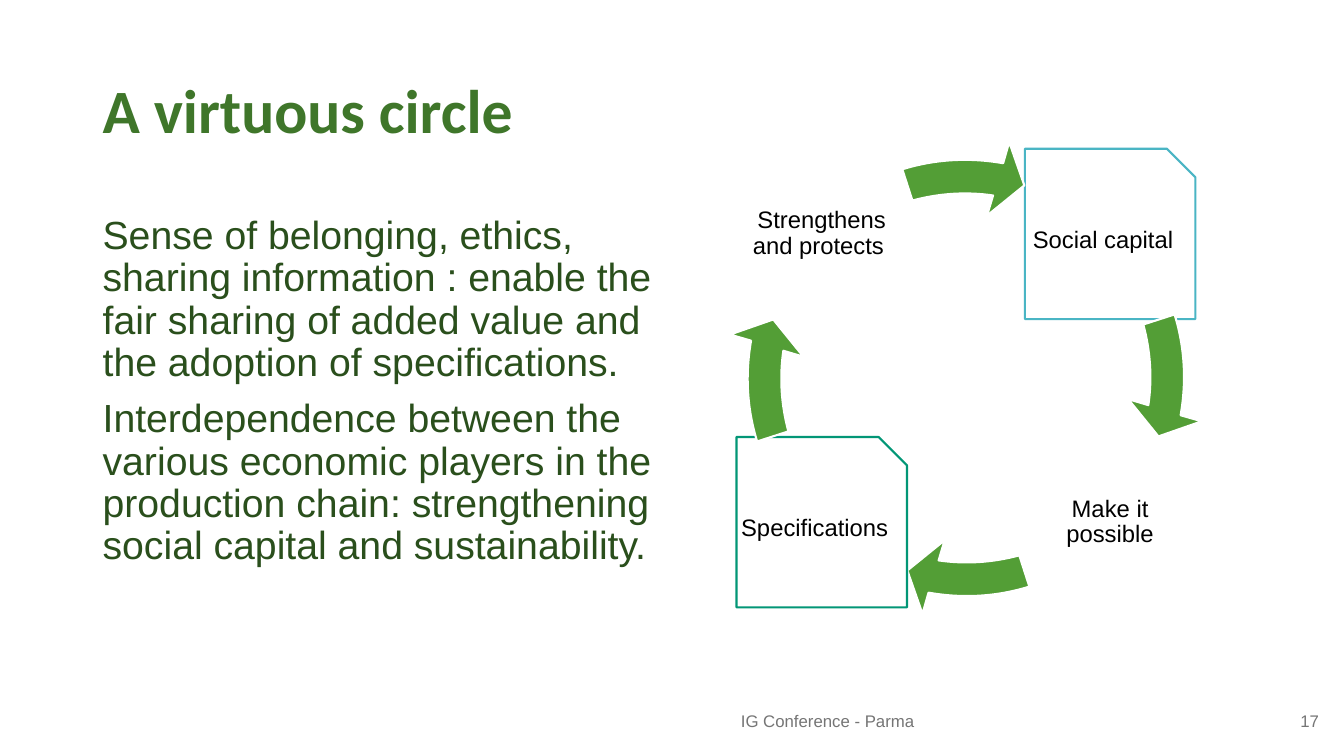
import lxml.etree
import pptx
import pptx.dml.color
import pptx.enum.shapes
import pptx.enum.text
import pptx.oxml.ns
import pptx.util

Inches = pptx.util.Inches
RGBColor = pptx.dml.color.RGBColor
ALIGN = pptx.enum.text.PP_ALIGN
ANCHOR = pptx.enum.text.MSO_ANCHOR
qn = pptx.oxml.ns.qn

WHITE = RGBColor(0xFF, 0xFF, 0xFF)
BLACK = RGBColor(0x00, 0x00, 0x00)
TITLE_GREEN = RGBColor(0x3F, 0x76, 0x2A)
BODY_GREEN = RGBColor(0x2A, 0x4F, 0x1C)
ARROW_GREEN = RGBColor(0x53, 0x9E, 0x36)
AQUA = RGBColor(0x4A, 0xB5, 0xC4)
TEAL = RGBColor(0x02, 0x96, 0x76)
GREY = RGBColor(0x75, 0x75, 0x75)

BODY = [
    "Sense of belonging, ethics, sharing information : enable the fair sharing "
    "of added value and the adoption of specifications.",
    "Interdependence between the various economic players in the production "
    "chain: strengthening social capital and sustainability.",
]
# Clockwise from the top right; an outline colour marks a card
STAGES = [
    ("Social capital", AQUA),
    ("Make it possible", None),
    ("Specifications ", TEAL),
    ("Strengthens and protects ", None),
]
# The right-hand arrow, measured from the centre of the circle
OUTER_CURVE = [(2.17, -0.31), (2.19, 0.03), (2.13, 0.37)]
HEAD = [(2.34, 0.43), (1.91, 0.58), (1.61, 0.21), (1.81, 0.27)]
INNER_CURVE = [(1.85, 0), (1.83, -0.27), (1.76, -0.53)]
ARROW = [(2.07, -0.63)] + OUTER_CURVE + HEAD + INNER_CURVE


def add_text(slide, box, paragraphs, size, color, font="Arial", bold=False,
             align=ALIGN.LEFT, anchor=ANCHOR.MIDDLE, spacing=0.9, insets=(0.1, 0.05)):
    frame = slide.shapes.add_textbox(*map(Inches, box)).text_frame
    frame.word_wrap = True
    frame.vertical_anchor = anchor
    frame.margin_left = frame.margin_right = Inches(insets[0])
    frame.margin_top = frame.margin_bottom = Inches(insets[1])
    for index, text in enumerate(paragraphs):
        paragraph = frame.add_paragraph() if index else frame.paragraphs[0]
        paragraph.text = text
        paragraph.alignment = align
        paragraph.line_spacing = spacing
        if index:
            paragraph.space_before = pptx.util.Pt(10)
        paragraph.font.name = font
        paragraph.font.size = pptx.util.Pt(size)
        paragraph.font.bold = bold
        paragraph.font.color.rgb = color


def paint(shape, fill, line):
    shape.shadow.inherit = False
    shape.fill.solid()
    shape.fill.fore_color.rgb = fill
    shape.line.color.rgb = line
    shape.line.width = pptx.util.Pt(1.5)


def add_stage(slide, box, label, outline):
    left, top, width, height = box
    if outline is not None:
        card = slide.shapes.add_shape(
            pptx.enum.shapes.MSO_SHAPE.SNIP_1_RECTANGLE, *map(Inches, box))
        paint(card, WHITE, outline)
        snip = 0.14
        box = (left, top + snip, width - snip, height - snip)
    add_text(slide, box, [label], 17, BLACK, align=ALIGN.CENTER, insets=(0.02, 0.02))


def turn(point, quarters):
    """Rotate a point clockwise about the origin by quarter turns."""
    x, y = point
    for _ in range(quarters):
        x, y = -y, x
    return x, y


def bend(lines):
    """Join three line segments into one cubic curve through their points."""
    curve = lxml.etree.Element(qn("a:cubicBezTo"))
    lines[0].addprevious(curve)
    for line in lines:
        curve.append(line[0])
        line.getparent().remove(line)


def add_arrow(slide, box, quarters):
    left, top, width, height = map(Inches, box)
    center = (left + width / 2, top + height / 2)
    points = [tuple(c + Inches(offset) for c, offset in zip(center, turn(point, quarters)))
              for point in ARROW]
    builder = slide.shapes.build_freeform(*points[0])
    builder.add_line_segments(points[1:], close=True)
    arrow = builder.convert_to_shape()

    # Measure the outline in the box of the whole circle
    outline = next(arrow._element.iter(qn("a:path")))
    for point in outline.iter(qn("a:pt")):
        point.set("x", str(int(point.get("x")) + arrow.left - left))
        point.set("y", str(int(point.get("y")) + arrow.top - top))
    outline.set("w", str(width))
    outline.set("h", str(height))
    arrow.left, arrow.top, arrow.width, arrow.height = left, top, width, height

    lines = outline.findall(qn("a:lnTo"))
    bend(lines[:3])
    bend(lines[7:10])
    paint(arrow, ARROW_GREEN, WHITE)


def add_cycle(slide, box):
    left, top, width, height = box
    side = 1.69
    reach = 1.43
    for quarters, (label, outline) in enumerate(STAGES):
        x, y = turn((reach, -reach), quarters)
        stage_box = (left + (width - side) / 2 + x, top + (height - side) / 2 + y,
                     side, side)
        add_stage(slide, stage_box, label, outline)
        add_arrow(slide, box, quarters)


def add_message(slide, box):
    left, top, width, height = box
    add_text(slide, (left, top, width, 1.45), ["A virtuous circle"], 44, TITLE_GREEN,
             font="Calibri", bold=True)
    add_text(slide, (left, top + 1.6, 5.67, height - 1.6), BODY, 28, BODY_GREEN,
             anchor=ANCHOR.TOP, insets=(0.1, 0.14))


def add_footer(slide, box):
    left, top, width, height = box
    add_text(slide, (left, top, 4.5, height), ["IG Conference - Parma"], 12, GREY,
             align=ALIGN.CENTER, spacing=1.0)
    add_text(slide, (left + width - 3, top, 3, height), ["17"], 12, GREY,
             align=ALIGN.RIGHT, spacing=1.0)


def main():
    deck = pptx.Presentation()
    deck.slide_width = Inches(13.33)
    deck.slide_height = Inches(7.5)
    slide = deck.slides.add_slide(deck.slide_layouts[6])
    add_message(slide, (0.92, 0.4, 11.5, 6.36))
    add_cycle(slide, (7.2, 1.37, 4.76, 4.76))
    add_footer(slide, (5.96, 6.95, 7.22, 0.4))
    deck.save("out.pptx")


if __name__ == "__main__":
    main()
